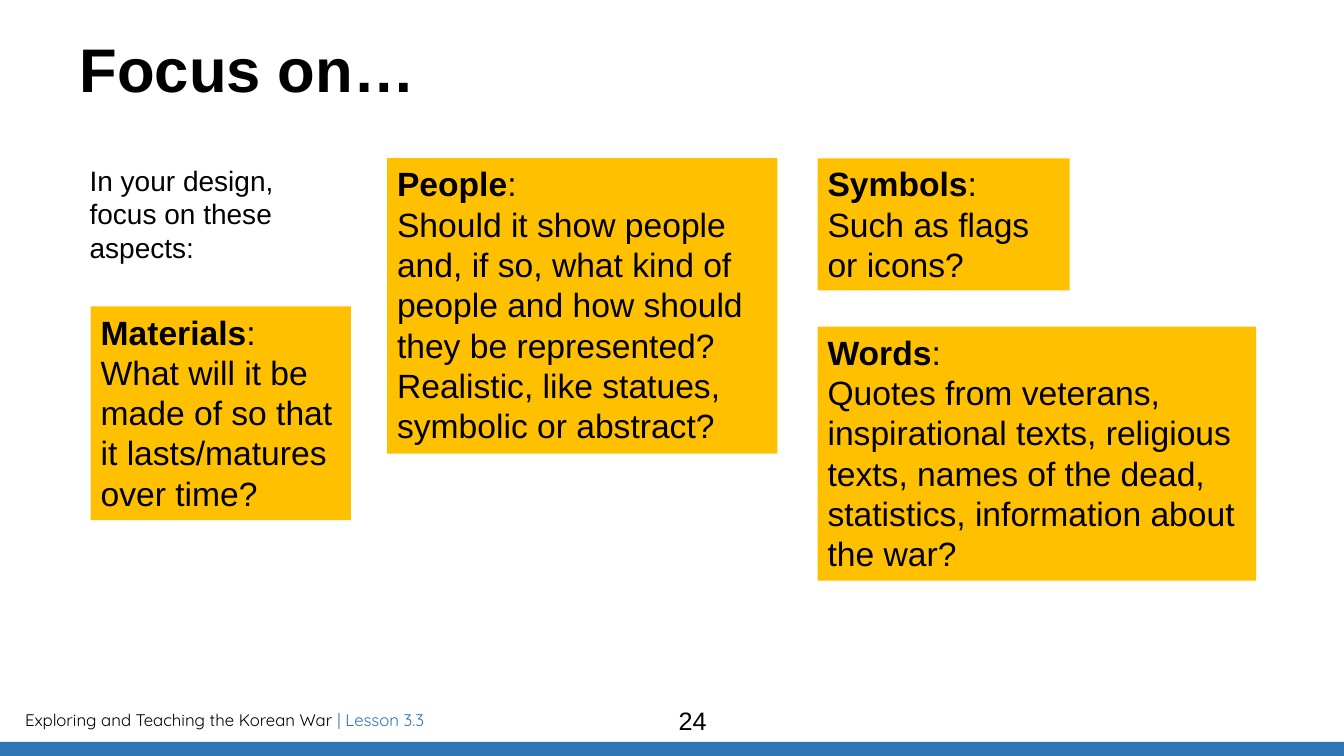
from pptx import Presentation
from pptx import util as u
from pptx.dml.color import RGBColor
from pptx.enum import shapes, text

PX = 9144  # EMU in one px, 100 px to the inch
BLACK, BLUE, GOLD = "000000", "2E75B6", "FFC000"

CARDS = [
    ((90, 304, 258, 212), "Materials",
     "What will it be made of so that it lasts/matures over time?"),
    ((384, 157, 387, 293), "People",
     "Should it show people and, if so, what kind of people and how should "
     "they be represented? Realistic, like statues, symbolic or abstract?"),
    ((811, 157, 250, 131), "Symbols", "Such as flags or icons?"),
    ((811, 324, 435, 252), "Words",
     "Quotes from veterans, inspirational texts, religious texts, names of "
     "the dead, statistics, information about the war?"),
]


def place(box):
    return [n * PX for n in box]


def hue(code):
    return RGBColor.from_string(code)


def put(para, words, size, color=BLACK, **form):
    """Add one run with its font values."""
    run = para.add_run()
    run.text = words
    form = {"name": "Arial", "size": u.Pt(size), "bold": False, **form}
    for key, value in form.items():
        setattr(run.font, key, value)
    run.font.color.rgb = hue(color)


def setup(frame, **form):
    form = {"word_wrap": True, "vertical_anchor": text.MSO_ANCHOR.TOP, **form}
    for key, value in form.items():
        setattr(frame, key, value)
    return frame


def label(slide, box, runs, size, align=text.PP_ALIGN.LEFT, font="Arial"):
    frame = setup(slide.shapes.add_textbox(*place(box)).text_frame)
    para = frame.paragraphs[0]
    para.alignment = align
    for words, color in runs:
        put(para, words, size, color, name=font)


def block(slide, box, color):
    """Add a plain filled rectangle."""
    shape = slide.shapes.add_shape(shapes.MSO_SHAPE.RECTANGLE, *place(box))
    shape.shadow.inherit = False
    shape.fill.solid()
    shape.fill.fore_color.rgb = hue(color)
    shape.line.fill.background()
    return shape


def card(slide, box, head, body):
    frame = setup(block(slide, box, GOLD).text_frame)
    first, second = frame.paragraphs[0], frame.add_paragraph()
    put(first, head, 24, bold=True)
    put(first, ":", 24)
    put(second, body, 24)
    for para in (first, second):
        para.alignment = text.PP_ALIGN.LEFT


def title(slide, box, words):
    shape = slide.shapes.title
    shape.left, shape.top, shape.width, shape.height = place(box)
    frame = setup(shape.text_frame, margin_left=0, margin_top=0,
                  margin_right=0, margin_bottom=0,
                  auto_size=text.MSO_AUTO_SIZE.NONE)
    para = frame.paragraphs[0]
    para.alignment = text.PP_ALIGN.LEFT
    para.line_spacing = 0.9
    put(para, words, 44, bold=True)


def main():
    deck = Presentation()
    deck.slide_width, deck.slide_height = place((1333, 750))
    slide = deck.slides.add_slide(deck.slide_layouts[5])
    title(slide, (79, 39, 1239, 96), "Focus on…")
    label(slide, (15, 699, 782, 30),
          [("Exploring and Teaching the Korean War ", BLACK),
           ("| Lesson 3.3", BLUE)], 12, font="Quicksand")
    block(slide, (0, 736, 1333, 14), BLUE)
    label(slide, (433, 695, 508, 40), [("24", BLACK)], 18,
          text.PP_ALIGN.CENTER)
    label(slide, (79, 157, 258, 111),
          [("In your design, focus on these aspects:", BLACK)], 20)
    for box, head, body in CARDS:
        card(slide, box, head, body)
    deck.save("out.pptx")


if __name__ == "__main__":
    main()
